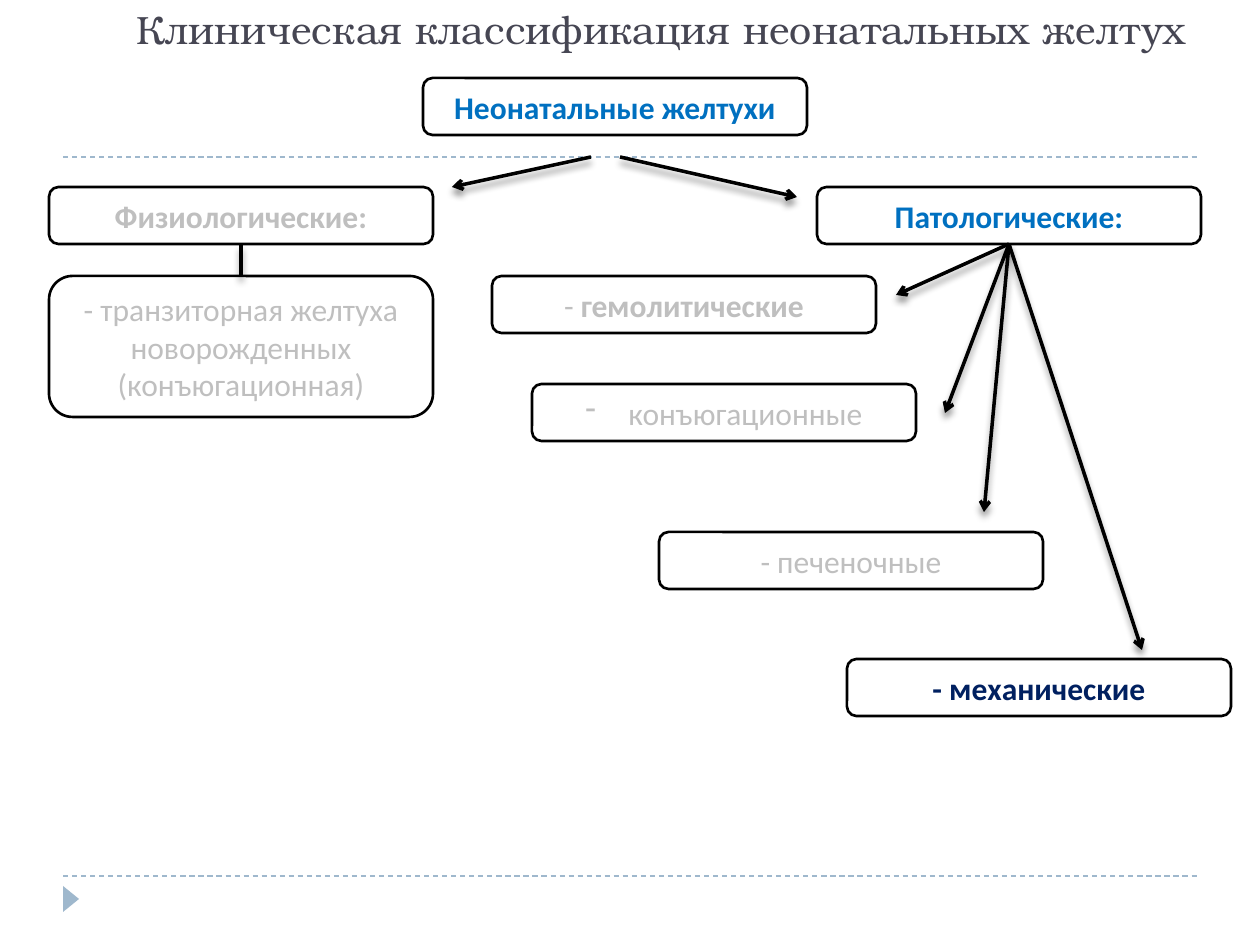
"""Build a slide that classifies neonatal jaundice as a branching diagram."""
from lxml.etree import SubElement
from pptx import Presentation
from pptx.dml.color import RGBColor
from pptx.enum.dml import MSO_LINE
from pptx.enum.shapes import MSO_CONNECTOR, MSO_SHAPE
from pptx.enum.text import MSO_ANCHOR, PP_ALIGN
from pptx.oxml.ns import qn
from pptx.util import Emu, Pt

COLORS = {"title": "464653", "accent": "9FB8CD", "ink": "000000", "paper": "FFFFFF",
          "blue": "0070C0", "navy": "002060", "muted": "BFBFBF"}
TITLE = "Клиническая классификация неонатальных желтух"
BOX_WIDTH, BOX_HEIGHT, TALL_HEIGHT = 384, 57, 141
LEFT_COLUMN, BRANCH_TOP, FORMS_TOP = 49, 187, 276
PATHOLOGICAL_LEFT = 817

CATEGORIES = [
    (423, 78, BOX_HEIGHT, "blue", False, [("Неонатальные желтухи", True)]),
    (LEFT_COLUMN, BRANCH_TOP, BOX_HEIGHT, "muted", False, [("Физиологические:", True)]),
    (PATHOLOGICAL_LEFT, BRANCH_TOP, BOX_HEIGHT, "blue", False, [("Патологические:", True)]),
    (LEFT_COLUMN, FORMS_TOP, TALL_HEIGHT, "muted", False,
     [("- транзиторная желтуха новорожденных (конъюгационная)", False)]),
    (492, FORMS_TOP, BOX_HEIGHT, "muted", False, [("- ", False), ("гемолитические", True)]),
    (532, 384, BOX_HEIGHT, "muted", True, [(" конъюгационные", False)]),
    (659, 532, BOX_HEIGHT, "muted", False, [("- печеночные", False)]),
    (847, 659, BOX_HEIGHT, "navy", False, [("- механические", True)]),
]
DIVIDER_LEVELS = [876, 157]
ROOT_ARROWS = [((591, 157), (452, 187)), ((620, 157), (797, 197))]
FORM_ARROW_TIPS = [(896, 295), (945, 413), (984, 512), (1142, 650)]


def px(length):
    return Emu(round(length * 914400 / 126))


def color(name):
    return RGBColor.from_string(COLORS[name])


def add_run(paragraph, text, font_name, size, color_name, bold=False):
    run = paragraph.add_run()
    run.text = text
    run.font.name, run.font.size, run.font.bold = font_name, Pt(size), bold
    run.font.color.rgb = color(color_name)


def add_category(slide, left, top, height, color_name, bulleted, runs):
    box = slide.shapes.add_shape(MSO_SHAPE.ROUNDED_RECTANGLE,
                                 px(left), px(top), px(BOX_WIDTH), px(height))
    box.shadow.inherit = False
    box.fill.solid()
    box.fill.fore_color.rgb = color("paper")
    box.line.color.rgb = color("ink")
    box.line.width = Pt(1.5)
    box.text_frame.word_wrap = True
    box.text_frame.vertical_anchor = MSO_ANCHOR.MIDDLE
    paragraph = box.text_frame.paragraphs[0]
    paragraph.alignment = PP_ALIGN.CENTER
    if bulleted:
        properties = paragraph._p.get_or_add_pPr()
        properties.set("marL", str(px(36)))
        properties.set("indent", str(-px(36)))
        SubElement(properties, qn("a:buFontTx"))
        SubElement(properties, qn("a:buChar"), char="-")
    for text, bold in runs:
        add_run(paragraph, text, "Calibri", 18, color_name, bold)


def add_line(slide, start, end, color_name, width):
    line = slide.shapes.add_connector(MSO_CONNECTOR.STRAIGHT, *map(px, start + end))
    line.line.color.rgb = color(color_name)
    line.line.width = Pt(width)
    effects = SubElement(line._element.spPr, qn("a:effectLst"))
    return line, effects


def add_divider(slide, level):
    divider, _ = add_line(slide, (63, level), (1197, level), "accent", 0.75)
    divider.line.dash_style = MSO_LINE.DASH


def add_branch(slide, start, end, arrow=True):
    branch, effects = add_line(slide, start, end, "ink", 2)
    if arrow:
        SubElement(branch.line._get_or_add_ln(), qn("a:tailEnd"), type="arrow")
    shadow = SubElement(effects, qn("a:outerShdw"), blurRad=str(Pt(4)), dist=str(Pt(3.4)),
                        dir="5400000", rotWithShape="0")
    shade = SubElement(shadow, qn("a:srgbClr"), val=COLORS["ink"])
    SubElement(shade, qn("a:alpha"), val="40000")


def main():
    deck = Presentation()
    deck.slide_width, deck.slide_height = px(1260), px(945)
    slide = deck.slides.add_slide(deck.slide_layouts[5])

    for level in DIVIDER_LEVELS:
        add_divider(slide, level)
    marker = slide.shapes.add_shape(MSO_SHAPE.ISOSCELES_TRIANGLE, px(58), px(891), px(26), px(16))
    marker.rotation = 90
    marker.shadow.inherit = False
    marker.fill.solid()
    marker.fill.fore_color.rgb = color("accent")
    marker.line.fill.background()

    title = slide.shapes.title
    title.left, title.top, title.width, title.height = px(63), px(0), px(1197), px(59)
    title.text_frame.vertical_anchor = MSO_ANCHOR.BOTTOM
    heading = title.text_frame.paragraphs[0]
    heading.alignment = PP_ALIGN.CENTER
    add_run(heading, TITLE, "TeX Gyre Bonum", 22.5, "title")

    for category in CATEGORIES:
        add_category(slide, *category)

    branch_bottom = BRANCH_TOP + BOX_HEIGHT
    physiological_center = LEFT_COLUMN + BOX_WIDTH // 2
    pathological_center = PATHOLOGICAL_LEFT + BOX_WIDTH // 2
    for start, end in ROOT_ARROWS:
        add_branch(slide, start, end)
    add_branch(slide, (physiological_center, branch_bottom),
               (physiological_center, FORMS_TOP), arrow=False)
    for tip in FORM_ARROW_TIPS:
        add_branch(slide, (pathological_center, branch_bottom), tip)

    deck.save("out.pptx")


if __name__ == "__main__":
    main()
